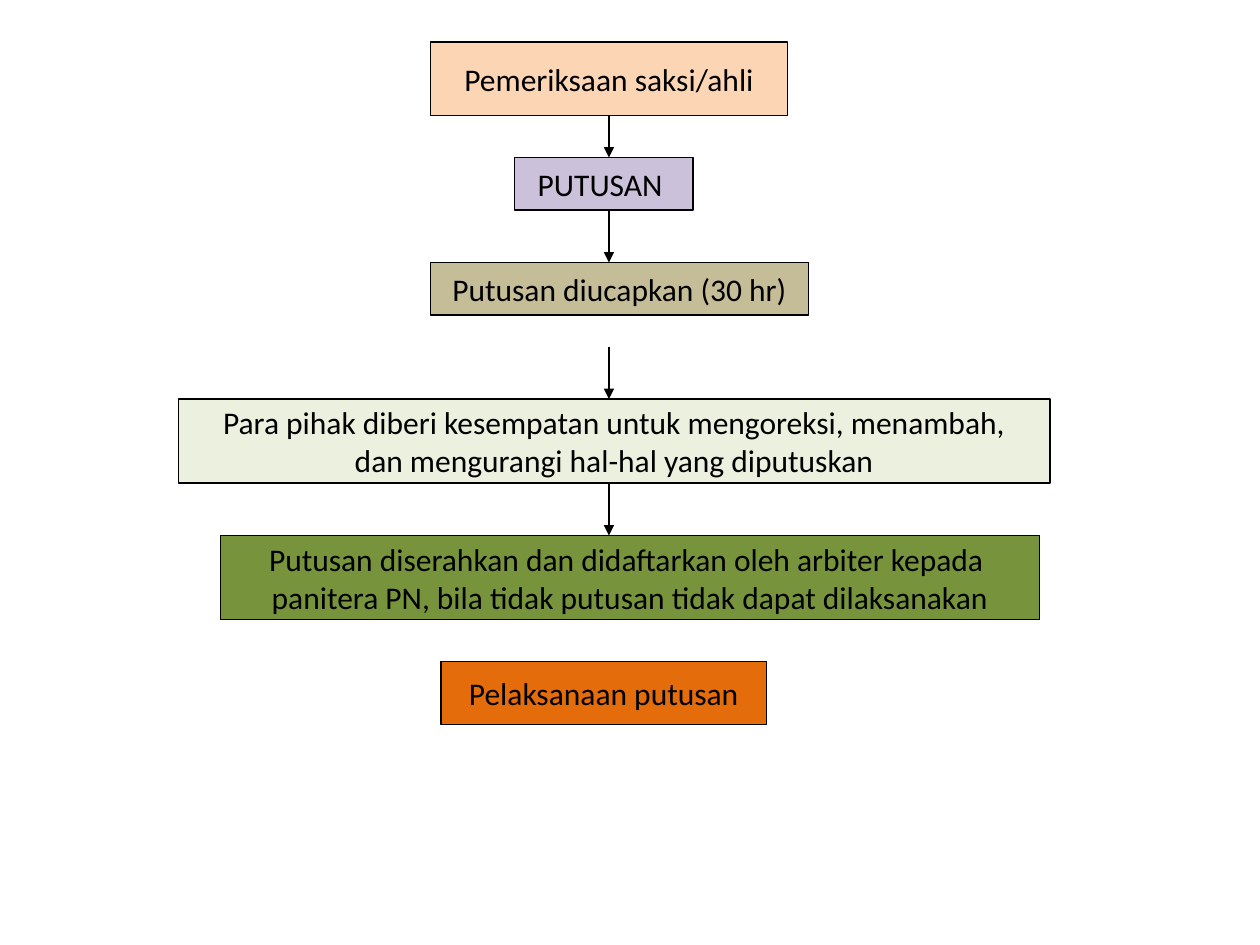
from dataclasses import dataclass
from lxml.etree import SubElement
from pptx import Presentation
from pptx.dml.color import RGBColor
from pptx.enum.shapes import MSO_CONNECTOR as Connector, MSO_SHAPE as Shape
from pptx.enum.text import MSO_ANCHOR as Anchor, PP_ALIGN as Align
from pptx.oxml.ns import qn
from pptx.util import Pt


@dataclass(frozen=True)
class Theme:
    font: str = "Calibri"
    size: float = 18
    ink: str = "000000"
    line_width: float = 0.75
    witness: str = "FCD5B5"
    verdict: str = "CCC1DA"
    reading: str = "C4BD97"
    correction: str = "EBF1DE"
    registration: str = "77933C"
    execution: str = "E46C0A"


THEME = Theme()
ARROW_X = 348

# left, top, width, height, length of the arrow leading in, fill, lines
STEPS = [
    (246, 24, 204, 42, 0, THEME.witness, ["Pemeriksaan saksi/ahli"]),
    (294, 90, 102, 30, 24, THEME.verdict, ["PUTUSAN "]),
    (246, 150, 216, 30, 30, THEME.reading, ["Putusan diucapkan (30 hr)"]),
    (102, 228, 498, 48, 30, THEME.correction, [
        "Para pihak diberi kesempatan untuk mengoreksi, menambah,",
        " dan mengurangi hal-hal yang diputuskan ",
    ]),
    (126, 306, 468, 48, 30, THEME.registration, [
        "Putusan diserahkan dan didaftarkan oleh arbiter kepada ",
        "panitera PN, bila tidak putusan tidak dapat dilaksanakan",
    ]),
    (252, 378, 186, 36, 0, THEME.execution, ["Pelaksanaan putusan"]),
]


def color(value):
    return RGBColor.from_string(value)


def style_line(line):
    line.color.rgb = color(THEME.ink)
    line.width = Pt(THEME.line_width)


def add_step(page, left, top, width, height, fill, lines):
    box = page.shapes.add_shape(Shape.RECTANGLE, Pt(left), Pt(top), Pt(width), Pt(height))
    box.shadow.inherit = False
    box.fill.solid()
    box.fill.fore_color.rgb = color(fill)
    style_line(box.line)
    frame = box.text_frame
    frame.word_wrap = False
    frame.vertical_anchor = Anchor.MIDDLE
    for index, text in enumerate(lines):
        para = frame.add_paragraph() if index else frame.paragraphs[0]
        para.alignment = Align.CENTER
        span = para.add_run()
        span.text = text
        span.font.name = THEME.font
        span.font.size = Pt(THEME.size)
        span.font.color.rgb = color(THEME.ink)


def add_arrow(page, start, end):
    arrow = page.shapes.add_connector(
        Connector.STRAIGHT, Pt(ARROW_X), Pt(start), Pt(ARROW_X), Pt(end))
    style_line(arrow.line)
    SubElement(arrow.line._get_or_add_ln(), qn("a:tailEnd"), type="triangle")
    SubElement(arrow._element.spPr, qn("a:effectLst"))


def main():
    deck = Presentation()
    deck.slide_width, deck.slide_height = Pt(720), Pt(540)
    page = deck.slides.add_slide(deck.slide_layouts[6])
    for left, top, width, height, reach, fill, lines in STEPS:
        add_step(page, left, top, width, height, fill, lines)
        if reach:
            add_arrow(page, top - reach, top)
    deck.save("out.pptx")


if __name__ == "__main__":
    main()
